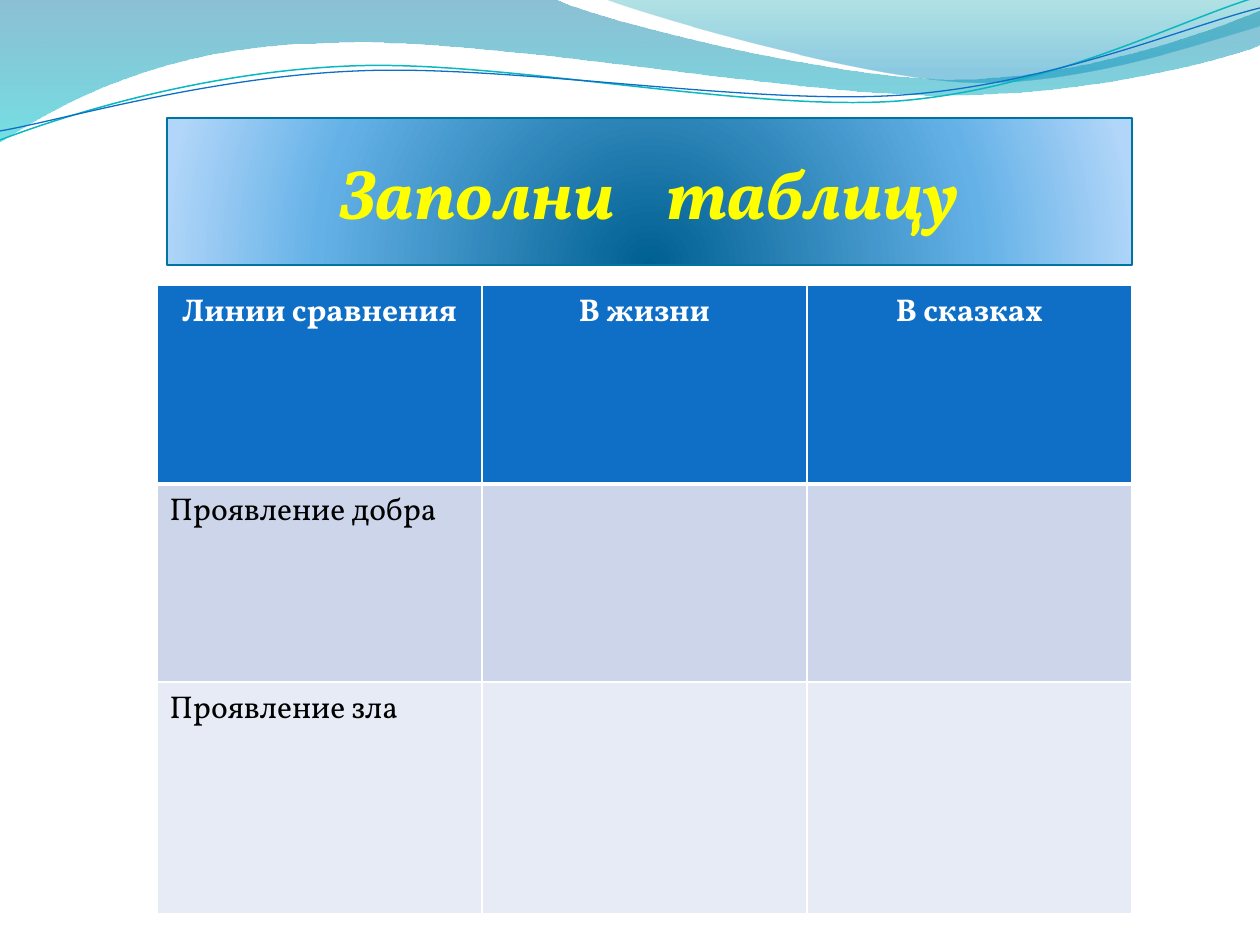
from pptx import Presentation
from pptx.dml.color import RGBColor
from pptx.enum.text import MSO_ANCHOR as Anchor, PP_ALIGN as Align
from pptx.oxml import parse_xml
from pptx.oxml.ns import nsdecls, qn
from pptx.util import Pt

EMU_PER_PX = 914400 / 126
FONT = "Vollkorn"
COLORS = {
    "blue": "0F6FC6", "teal": "0AB8BF", "edge": "0074A1", "white": "FFFFFF",
    "black": "000000", "yellow": "FFFF00",
    "good_row": "CCD5EA", "evil_row": "E7EBF5",
    "wave_top": "0074A1", "wave_bottom": "00C6CF",
    "crest_top": "00A1A9", "crest_bottom": "008BBF",
    "title_dark": "006091", "title_mid": "64B1E7", "title_light": "B1D6F9",
}
DOWNWARD = '<a:lin ang="5400000" scaled="0"/>'
FROM_BOTTOM = ('<a:path path="circle"><a:fillToRect l="50000" t="130000" '
               'r="50000" b="-30000"/></a:path>')

# Outlines in px: two numbers are a line's end, six are a Bezier curve
WAVE = [(0, 0), (554, -1), (600, 21, 837, 79, 955, 79),
        (1075, 79, 1207, 33, 1260, 11), (1261, 45),
        (1239, 55, 1096, 96, 940, 95), (784, 95, 481, 35, 324, 43),
        (163, 45, 58, 105, -1, 142)]
CREST = [(604, -1), (641, 14, 859, 78, 969, 82),
         (1079, 86, 1211, 40, 1260, 26), (1260, 0)]
TEAL_LINE = [(0, 140), (60, 117, 199, 72, 349, 66),
             (498, 59, 747, 112, 898, 101), (1050, 89, 1182, 19, 1257, -3)]
BLUE_LINE = [(0, 131), (59, 121, 207, 77, 357, 71),
             (508, 64, 752, 106, 903, 95), (1053, 84, 1187, 26, 1260, 8)]


def px(value):
    return round(value * EMU_PER_PX)


def rgb(name):
    return RGBColor.from_string(COLORS[name])


def color_xml(name, alpha=100):
    opacity = f'<a:alpha val="{alpha * 1000}"/>' if alpha < 100 else ""
    return f'<a:srgbClr val="{COLORS[name]}">{opacity}</a:srgbClr>'


class SlideBuilder:
    def __init__(self, slide, font):
        self.slide = slide
        self.font = font

    def style(self, paragraph, size, color, bold=False, italic=False, align=Align.LEFT):
        paragraph.alignment = align
        font = paragraph.font
        font.name, font.size, font.bold, font.italic = self.font, Pt(size), bold, italic
        font.color.rgb = rgb(color)

    def gradient(self, shape, stops, direction):
        shape.fill.gradient()
        old = shape._element.spPr.find(qn("a:gradFill"))
        stops_xml = "".join(f'<a:gs pos="{position * 1000}">{color_xml(color, alpha)}</a:gs>'
                            for position, color, alpha in stops)
        old.getparent().replace(old, parse_xml(
            f'<a:gradFill {nsdecls("a")} rotWithShape="1">'
            f'<a:gsLst>{stops_xml}</a:gsLst>{direction}</a:gradFill>'))

    def freeform(self, outline, close):
        points = [(px(x), px(y)) for step in outline
                  for x, y in zip(step[::2], step[1::2])]
        builder = self.slide.shapes.build_freeform(*points[0], scale=1.0)
        builder.add_line_segments(points[1:], close=close)
        shape = builder.convert_to_shape()
        shape.shadow.inherit = False
        # Join each curve's three points into one Bezier segment
        lines = iter(list(shape._element.iter(qn("a:lnTo"))))
        for step in outline[1:]:
            line = next(lines)
            if len(step) == 6:
                curve = parse_xml(f'<a:cubicBezTo {nsdecls("a")}/>')
                line.addprevious(curve)
                for part in (line, next(lines), next(lines)):
                    curve.append(part[0])
                    part.getparent().remove(part)
        return shape

    def wave(self, outline, stops):
        shape = self.freeform(outline, close=True)
        self.gradient(shape, stops, DOWNWARD)
        shape.line.fill.background()

    def wave_line(self, outline, color, width):
        shape = self.freeform(outline, close=False)
        shape.fill.background()
        shape.line.color.rgb = rgb(color)
        shape.line.width = Pt(width)

    def borders(self, cell, top, bottom):
        properties = cell._tc.get_or_add_tcPr()
        for side, width in (("L", 1), ("R", 1), ("T", top), ("B", bottom)):
            properties.append(parse_xml(
                f'<a:ln{side} {nsdecls("a")} w="{Pt(width)}"><a:solidFill>'
                f'{color_xml("white")}</a:solidFill></a:ln{side}>'))

    def table(self, left, top, column_width, row_heights, rows, fills):
        columns = len(rows[0])
        table = self.slide.shapes.add_table(
            len(rows), columns, px(left), px(top),
            px(column_width * columns), px(sum(row_heights))).table
        for column in table.columns:
            column.width = px(column_width)
        for r, texts in enumerate(rows):
            table.rows[r].height = px(row_heights[r])
            header = r == 0
            for c, text in enumerate(texts):
                cell = table.cell(r, c)
                self.borders(cell, top=3 if r == 1 else 1, bottom=3 if header else 1)
                cell.fill.solid()
                cell.fill.fore_color.rgb = rgb(fills[r])
                cell.text = text
                self.style(cell.text_frame.paragraphs[0], 18,
                           "white" if header else "black", bold=header,
                           align=Align.CENTER if header else Align.LEFT)

    def title(self, left, top, width, height, words, gap):
        shape = self.slide.shapes.title
        shape.left, shape.top, shape.width, shape.height = map(px, (left, top, width, height))
        self.gradient(shape, [(0, "title_dark", 100), (68, "title_mid", 100),
                              (100, "title_light", 100)], FROM_BOTTOM)
        shape.line.color.rgb = rgb("edge")
        shape.line.width = Pt(0.75)
        shape.shadow.inherit = False
        shape.text_frame.vertical_anchor = Anchor.MIDDLE
        paragraph = shape.text_frame.paragraphs[0]
        self.style(paragraph, 40, "yellow", bold=True, italic=True, align=Align.CENTER)
        first, second = words
        for text in (first, " ", second):
            run = paragraph.add_run()
            run.text = text
            if text == " ":  # one space, widened by letter spacing
                run._r.get_or_add_rPr().set("spc", str(gap * 100))
        # Bring the title in front of the waves
        self.slide.shapes._spTree.append(shape._element)


def main():
    presentation = Presentation()
    presentation.slide_width, presentation.slide_height = px(1260), px(945)
    builder = SlideBuilder(presentation.slides.add_slide(presentation.slide_layouts[5]), FONT)

    # Wave decoration
    builder.wave(WAVE, [(0, "wave_top", 45), (100, "wave_bottom", 55)])
    builder.wave(CREST, [(0, "crest_top", 30), (80, "crest_bottom", 45)])
    builder.wave_line(TEAL_LINE, "teal", 0.85)
    builder.wave_line(BLUE_LINE, "blue", 0.75)

    # Comparison table
    builder.table(157, 285, 325, [199, 198, 232],
                  [["Линии сравнения", "В жизни", "В сказках"],
                   ["Проявление добра", "", ""],
                   ["Проявление зла", "", ""]],
                  ["blue", "good_row", "evil_row"])

    # Title
    builder.title(167, 118, 965, 147, ("Заполни", "таблицу"), gap=22)

    presentation.save("out.pptx")


if __name__ == "__main__":
    main()
